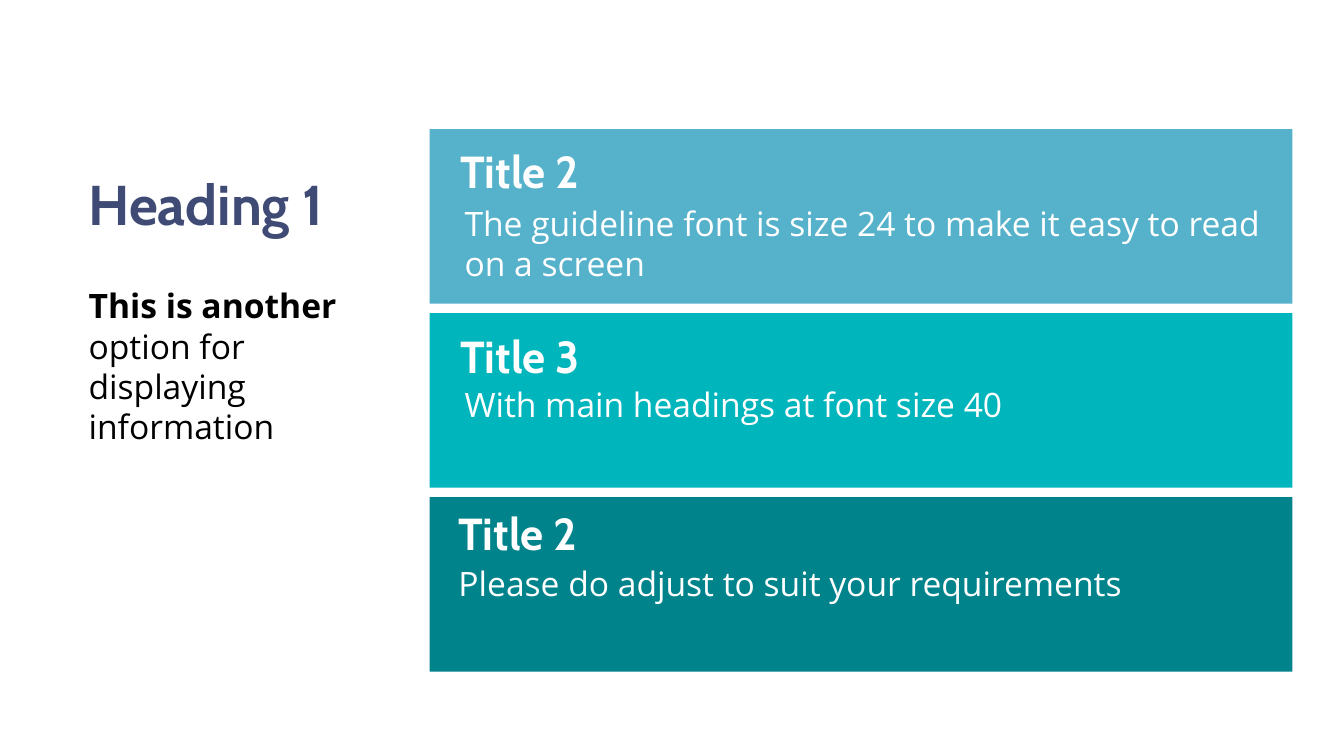
from pptx import Presentation
from pptx.dml.color import RGBColor
from pptx.enum.shapes import MSO_SHAPE
from pptx.enum.text import MSO_AUTO_SIZE
from pptx.util import Pt

RECT = MSO_SHAPE.RECTANGLE
GROW = MSO_AUTO_SIZE.SHAPE_TO_FIT_TEXT

COLORS = {
    "navy": "3F4B75",
    "black": "000000",
    "white": "FFFFFF",
    "sky": "56B2CB",
    "turquoise": "00B5BC",
    "teal": "00838B",
}
PANEL_LEFT, PANEL_TOP = 306.9, 92.3
PANEL_WIDTH, PANEL_HEIGHT = 616.3, 124.6
PANEL_PITCH = 131.4


def add_run(p, text, font="Open Sans", size=24, color="white", bold=False):
    r = p.add_run()
    r.text = text
    r.font.name = font
    r.font.size = Pt(size)
    r.font.bold = bold
    r.font.color.rgb = RGBColor.from_string(COLORS[color])


class Deck:
    heading = {"font": "Cabin", "bold": True}

    def __init__(self, prs):
        self.s = prs.slides.add_slide(prs.slide_layouts[6])

    def panel(self, x, y, w, h, color):
        sp = self.s.shapes.add_shape(RECT, Pt(x), Pt(y), Pt(w), Pt(h))
        sp.shadow.inherit = False
        sp.fill.solid()
        sp.fill.fore_color.rgb = RGBColor.from_string(COLORS[color])
        sp.line.fill.background()

    def text(self, x, y, w, h, text, **fmt):
        sp = self.s.shapes.add_textbox(Pt(x), Pt(y), Pt(w), Pt(h))
        tf = sp.text_frame
        tf.word_wrap = True
        tf.auto_size = GROW
        p = tf.paragraphs[0]
        add_run(p, text, **fmt)
        return p

    def title(self, x, y, w, h, text, **fmt):
        self.text(x, y, w, h, text, **self.heading, **fmt)


def main():
    prs = Presentation()
    prs.slide_width, prs.slide_height = Pt(960), Pt(540)
    deck = Deck(prs)

    deck.title(56.2, 117.4, 220.3, 55.4, "Heading 1", size=40, color="navy")
    p = deck.text(56.2, 200.2, 203, 123.8, "This is another ",
                  color="black", bold=True)
    add_run(p, "option for displaying information", color="black")

    panels = [
        ("sky", "Title 2", (321.8, 99.4),
         "The guideline font is size 24 to make it easy to read on a screen",
         (324.7, 141.1), 65.5),
        ("turquoise", "Title 3", (321.8, 231.1),
         "With main headings at font size 40", (324.7, 270.7), 36),
        ("teal", "Title 2", (320.4, 357.8),
         "Please do adjust to suit your requirements", (320.4, 398.9), 36),
    ]
    for i, (color, title, title_at, body, body_at, body_h) in enumerate(panels):
        deck.panel(PANEL_LEFT, PANEL_TOP + i * PANEL_PITCH,
                   PANEL_WIDTH, PANEL_HEIGHT, color)
        deck.title(*title_at, 184.3, 46.1, title, size=32)
        deck.text(*body_at, 589, body_h, body)

    prs.save("out.pptx")


if __name__ == "__main__":
    main()
